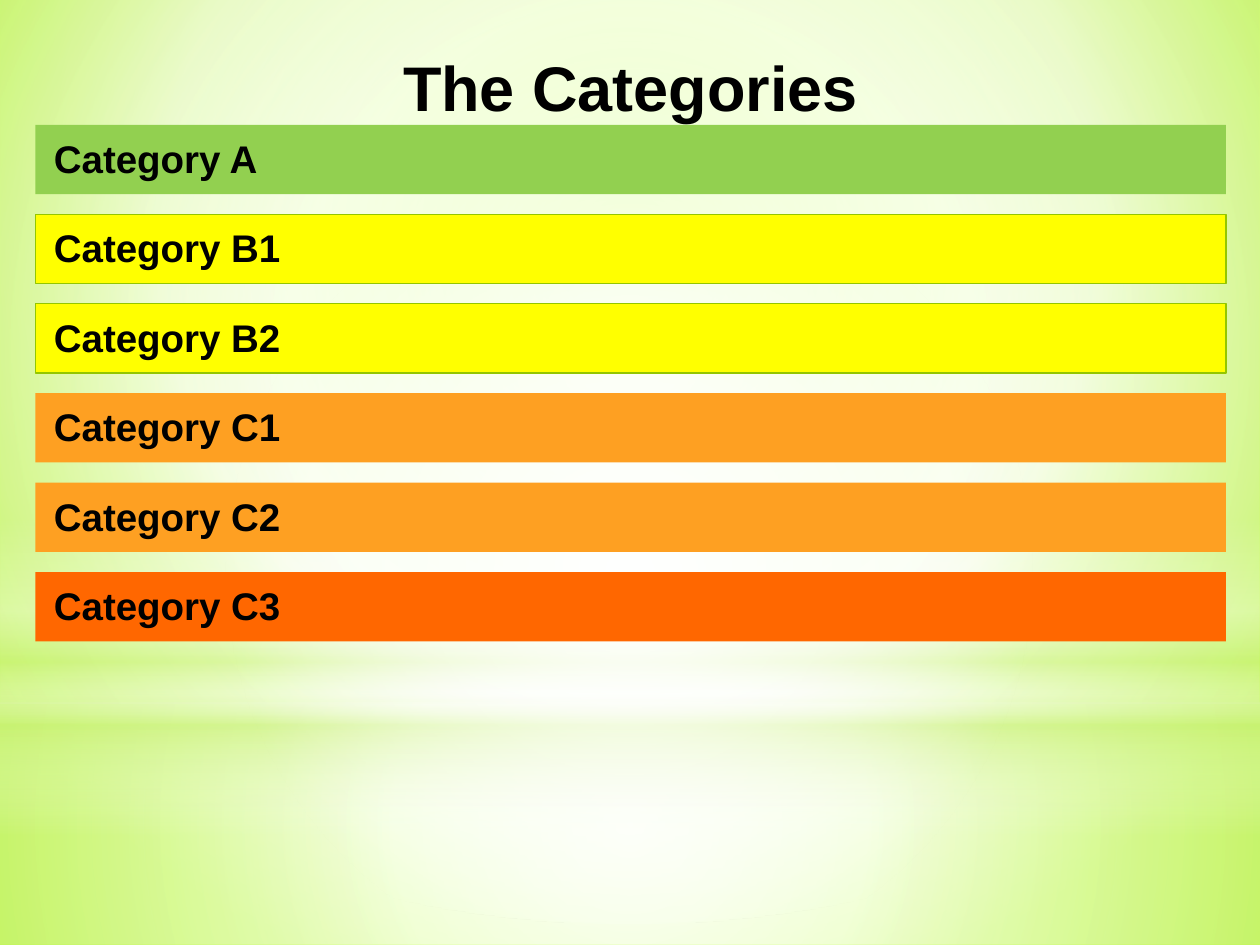
from typing import NamedTuple, Optional

from lxml import etree
from pptx import Presentation
from pptx.dml.color import RGBColor
from pptx.enum.shapes import MSO_SHAPE
from pptx.enum.text import MSO_ANCHOR, PP_ALIGN
from pptx.oxml.ns import qn
from pptx.util import Inches, Pt

SLIDE_W, SLIDE_H = 10, 7.5
FONT = "Arial"

BLACK = RGBColor(0x00, 0x00, 0x00)
WHITE = RGBColor(0xFF, 0xFF, 0xFF)
LIME = RGBColor(0xCA, 0xF2, 0x78)
BRIGHT_LIME = RGBColor(0xCA, 0xFF, 0x60)
PALE_LIME = RGBColor(0xF7, 0xFF, 0xE7)
DEEP_LIME = RGBColor(0xB7, 0xFF, 0x29)
GREEN = RGBColor(0x92, 0xD0, 0x50)
YELLOW = RGBColor(0xFF, 0xFF, 0x00)
YELLOW_EDGE = RGBColor(0x94, 0xC6, 0x00)
ORANGE = RGBColor(0xFE, 0xA0, 0x22)
RED_ORANGE = RGBColor(0xFF, 0x67, 0x00)

# Category rows: a column of equal bars
LEFT, WIDTH = 0.28, 9.45
FIRST_TOP, PITCH, BAR_H = 0.99, 0.71, 0.55


class Stop(NamedTuple):
    position: int
    color: RGBColor
    opacity: int = 100


class Glow(NamedTuple):
    outline: MSO_SHAPE
    top: float  # share of the slide height
    height: float  # share of the slide height
    stops: list[Stop]
    focus: Optional[tuple[int, int, int, int]] = (50, 50, 50, 50)


class Category(NamedTuple):
    label: str
    fill: RGBColor
    edge: Optional[RGBColor] = None


BACKGROUND = [Stop(0, BRIGHT_LIME), Stop(60, PALE_LIME), Stop(100, DEEP_LIME)]

GLOWS = [
    Glow(MSO_SHAPE.RECTANGLE, 0.744, 0.256,
         [Stop(0, WHITE, 91), Stop(37, WHITE, 76), Stop(100, LIME, 79)]),
    Glow(MSO_SHAPE.RECTANGLE, 0, 0.744,
         [Stop(0, WHITE, 89), Stop(48, WHITE, 62), Stop(100, LIME, 79)]),
    Glow(MSO_SHAPE.RECTANGLE, 0.55, 0.333,
         [Stop(0, WHITE, 0), Stop(29, WHITE, 30), Stop(45, LIME, 40),
          Stop(55, WHITE, 26), Stop(65, LIME, 60), Stop(100, WHITE, 0)], None),
    Glow(MSO_SHAPE.OVAL, 0.233, 0.744, [Stop(0, WHITE), Stop(56, WHITE, 0)]),
]

CATEGORIES = [
    Category("Category A", GREEN),
    Category("Category B1", YELLOW, YELLOW_EDGE),
    Category("Category B2", YELLOW, YELLOW_EDGE),
    Category("Category C1", ORANGE),
    Category("Category C2", ORANGE),
    Category("Category C3", RED_ORANGE),
]


def set_gradient(properties, stops: list[Stop], focus) -> None:
    """Swap a solid fill for a radial gradient, or a downward one if no focus."""
    gradient = etree.Element(qn("a:gradFill"), rotWithShape="1")
    stop_list = etree.SubElement(gradient, qn("a:gsLst"))
    for stop in stops:
        entry = etree.SubElement(stop_list, qn("a:gs"), pos=str(stop.position * 1000))
        color = etree.SubElement(entry, qn("a:srgbClr"), val=str(stop.color))
        if stop.opacity < 100:
            etree.SubElement(color, qn("a:alpha"), val=str(stop.opacity * 1000))
    if focus:
        path = etree.SubElement(gradient, qn("a:path"))
        path.set("path", "circle")
        sides = {side: str(share * 1000) for side, share in zip("ltrb", focus)}
        etree.SubElement(path, qn("a:fillToRect"), **sides)
    else:
        etree.SubElement(gradient, qn("a:lin"), ang="5400000", scaled="0")
    properties.replace(properties.find(qn("a:solidFill")), gradient)


def add_plain_shape(slide, outline: MSO_SHAPE, left: float, top: float,
                    width: float, height: float, fill: RGBColor):
    shape = slide.shapes.add_shape(
        outline, Inches(left), Inches(top), Inches(width), Inches(height))
    shape.shadow.inherit = False
    shape.fill.solid()
    shape.fill.fore_color.rgb = fill
    shape.line.fill.background()
    return shape


def write(frame, text: str, size: int, align: PP_ALIGN):
    frame.word_wrap = True
    frame.text = text
    paragraph = frame.paragraphs[0]
    paragraph.alignment = align
    font = paragraph.runs[0].font
    font.name, font.size, font.bold = FONT, Pt(size), True
    font.color.rgb = BLACK
    return paragraph


def draw_glow(slide, glow: Glow) -> None:
    shape = add_plain_shape(slide, glow.outline, 0, glow.top * SLIDE_H,
                            SLIDE_W, glow.height * SLIDE_H, WHITE)
    set_gradient(shape._element.spPr, glow.stops, glow.focus)


def draw_category(slide, row: int, category: Category) -> None:
    bar = add_plain_shape(slide, MSO_SHAPE.RECTANGLE, LEFT, FIRST_TOP + row * PITCH,
                          WIDTH, BAR_H, category.fill)
    if category.edge is not None:
        bar.line.color.rgb = category.edge
        bar.line.width = Pt(0.75)
    frame = bar.text_frame
    frame.vertical_anchor = MSO_ANCHOR.TOP
    frame.margin_top = Inches(0.08)
    paragraph = write(frame, category.label, 22, PP_ALIGN.JUSTIFY)
    paragraph.space_after = Pt(3)
    paragraph._p.get_or_add_pPr().set("marL", str(Inches(0.05)))


def main() -> None:
    prs = Presentation()
    prs.slide_width, prs.slide_height = Inches(SLIDE_W), Inches(SLIDE_H)
    slide = prs.slides.add_slide(prs.slide_layouts[6])

    # Background and its soft light
    slide.background.fill.solid()
    set_gradient(slide._element.cSld.bg.bgPr, BACKGROUND, (20, 10, 20, 60))
    for glow in GLOWS:
        draw_glow(slide, glow)

    # Title
    title = slide.shapes.add_textbox(
        Inches(LEFT), Inches(0.29), Inches(WIDTH), Inches(0.79)).text_frame
    title.vertical_anchor = MSO_ANCHOR.MIDDLE
    write(title, "The Categories", 36, PP_ALIGN.CENTER)

    # Category bars
    for row, category in enumerate(CATEGORIES):
        draw_category(slide, row, category)

    prs.save("out.pptx")


if __name__ == "__main__":
    main()
